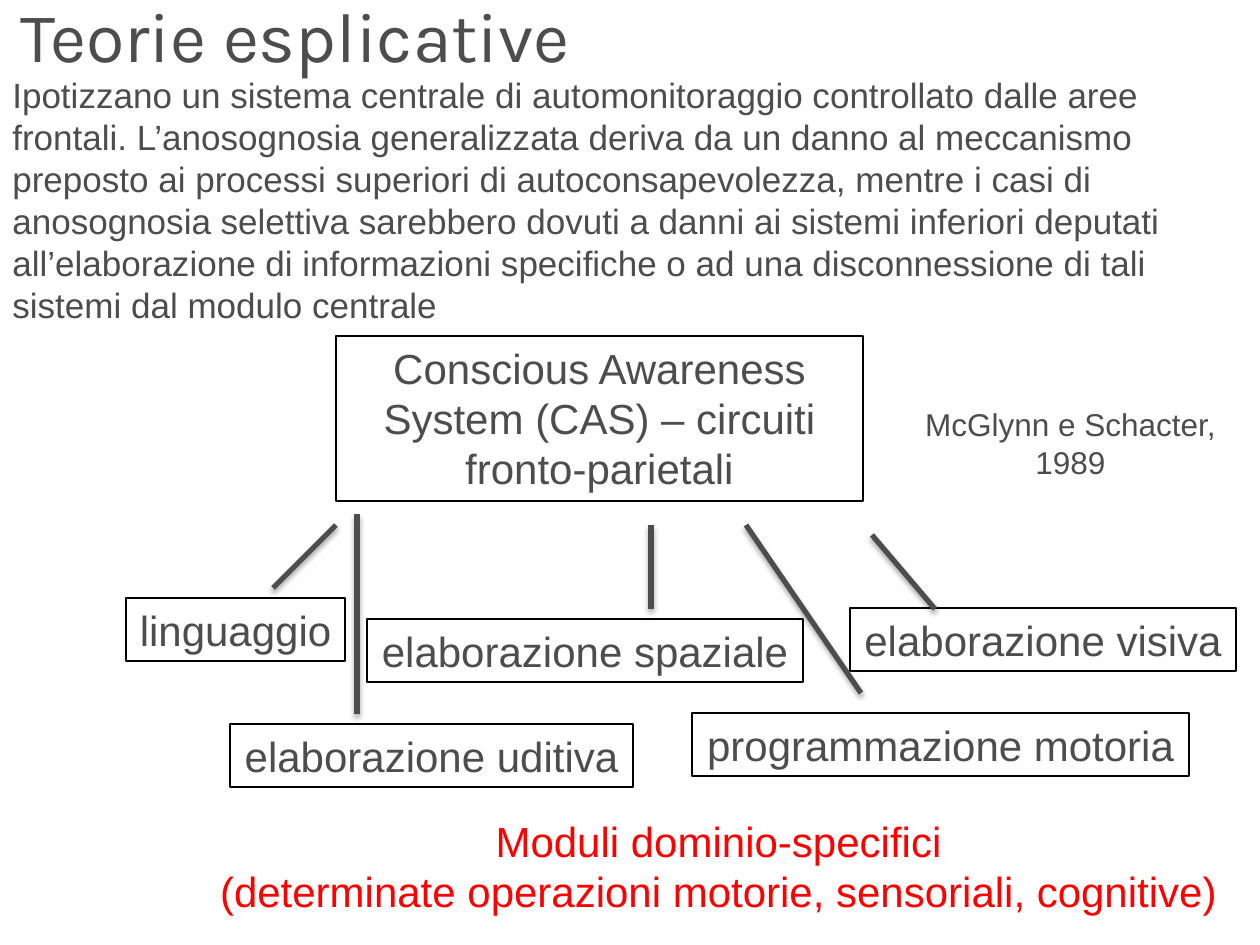
from lxml.etree import SubElement
from pptx import Presentation
from pptx.dml.color import RGBColor
from pptx.enum.shapes import MSO_CONNECTOR, MSO_SHAPE
from pptx.enum.text import MSO_ANCHOR, MSO_AUTO_SIZE, PP_ALIGN
from pptx.oxml.ns import qn
from pptx.util import Pt

SCALE = 914400 / 126
GREY, RED, BLACK = "4D4D4D", "FF0000", "000000"
BODY = (
    "Ipotizzano un sistema centrale di automonitoraggio controllato dalle aree frontali. "
    "L’anosognosia generalizzata deriva da un danno al meccanismo preposto ai processi "
    "superiori di autoconsapevolezza, mentre i casi di anosognosia selettiva sarebbero "
    "dovuti a danni ai sistemi inferiori deputati all’elaborazione di informazioni "
    "specifiche o ad una disconnessione di tali sistemi dal modulo centrale"
)
MODULES = [
    ("linguaggio", 126, 598, 219),
    ("elaborazione spaziale", 367, 619, 436),
    ("elaborazione visiva", 850, 608, 386),
    ("elaborazione uditiva", 230, 724, 403),
    ("programmazione motoria", 692, 713, 497),
]
LINKS = [
    (872, 535, 935, 609),
    (651, 525, 651, 609),
    (746, 525, 861, 693),
    (336, 525, 273, 588),
    (357, 514, 357, 714),
]


def px(*values):
    """Turn whole pixels into EMU."""
    return [round(v * SCALE) for v in values]


def colour(code):
    """Return the colour of a hex string."""
    return RGBColor.from_string(code)


def write(s, lines, size, code=GREY, font="Arial", align=PP_ALIGN.CENTER,
          anchor=MSO_ANCHOR.TOP, wrap=True, fit=MSO_AUTO_SIZE.SHAPE_TO_FIT_TEXT):
    """Fill a shape with one formatted paragraph per line."""
    tf = s.text_frame
    tf.word_wrap, tf.auto_size, tf.vertical_anchor = wrap, fit, anchor
    for i, line in enumerate(lines):
        p = tf.add_paragraph() if i else tf.paragraphs[0]
        p.alignment = align
        r = p.add_run()
        r.text = line
        r.font.size, r.font.name = Pt(size), font
        r.font.color.rgb = colour(code)


def add_title(slide, text):
    """Place and format the title placeholder."""
    s = slide.shapes.title
    s.left, s.top, s.width, s.height = px(8, 3, 1197, 63)
    write(s, [text], 40, font="Karla", align=PP_ALIGN.LEFT,
          anchor=MSO_ANCHOR.MIDDLE, fit=MSO_AUTO_SIZE.NONE)


def add_text(slide, box, lines, size, **style):
    """Add a text box."""
    write(slide.shapes.add_textbox(*px(*box)), lines, size, **style)


def add_box(slide, box, text, wrap=False):
    """Add an outlined rectangle with a label."""
    s = slide.shapes.add_shape(MSO_SHAPE.RECTANGLE, *px(*box))
    s.shadow.inherit = False
    s.fill.background()
    s.line.color.rgb = colour(BLACK)
    s.line.width = Pt(0.75)
    write(s, [text], 24, wrap=wrap)


def add_link(slide, ends):
    """Add a thick line with a soft shadow below it."""
    s = slide.shapes.add_connector(MSO_CONNECTOR.STRAIGHT, *px(*ends))
    s.line.color.rgb = colour(GREY)
    s.line.width = Pt(3)
    effects = SubElement(s._element.spPr, qn("a:effectLst"))
    shadow = SubElement(effects, qn("a:outerShdw"), blurRad=str(Pt(3.1)),
                        dist=str(Pt(1.8)), dir="5400000", rotWithShape="0")
    tint = SubElement(shadow, qn("a:srgbClr"), val=BLACK)
    SubElement(tint, qn("a:alpha"), val="35000")


def main():
    """Build the slide and save it."""
    prs = Presentation()
    prs.slide_width, prs.slide_height = px(1260, 945)
    slide = prs.slides.add_slide(prs.slide_layouts[5])
    add_title(slide, "Teorie esplicative")
    add_text(slide, (0, 84, 1260, 231), [BODY], 20, align=PP_ALIGN.LEFT,
             anchor=MSO_ANCHOR.MIDDLE, fit=MSO_AUTO_SIZE.NONE)
    add_box(slide, (336, 336, 527, 165),
            "Conscious Awareness System (CAS) – circuiti fronto-parietali", wrap=True)
    add_text(slide, (178, 809, 1081, 115),
             ["Moduli dominio-specifici",
              "(determinate operazioni motorie, sensoriali, cognitive)"], 24, code=RED)
    for text, left, top, width in MODULES:
        add_box(slide, (left, top, width, 63), text)
    for ends in LINKS:
        add_link(slide, ends)
    add_text(slide, (903, 399, 335, 89), ["McGlynn e Schacter, 1989"], 18)
    prs.save("out.pptx")


if __name__ == "__main__":
    main()
